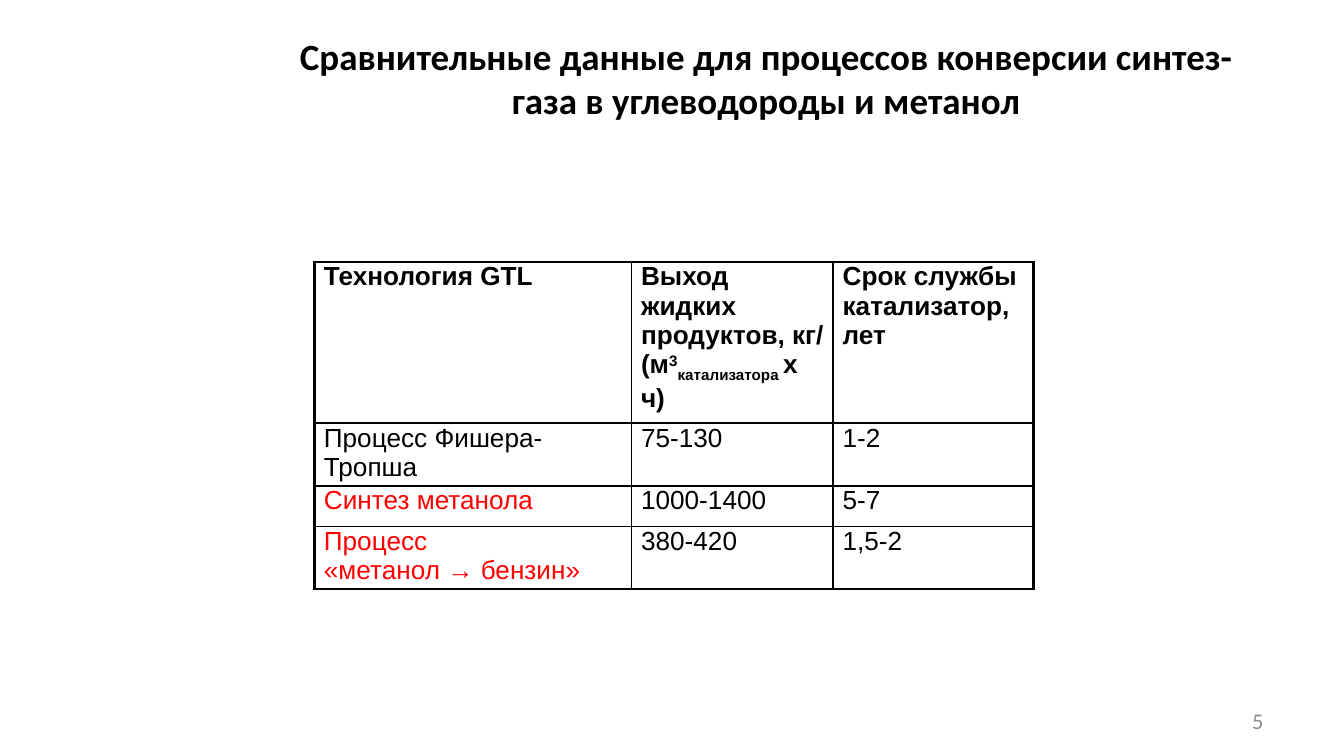
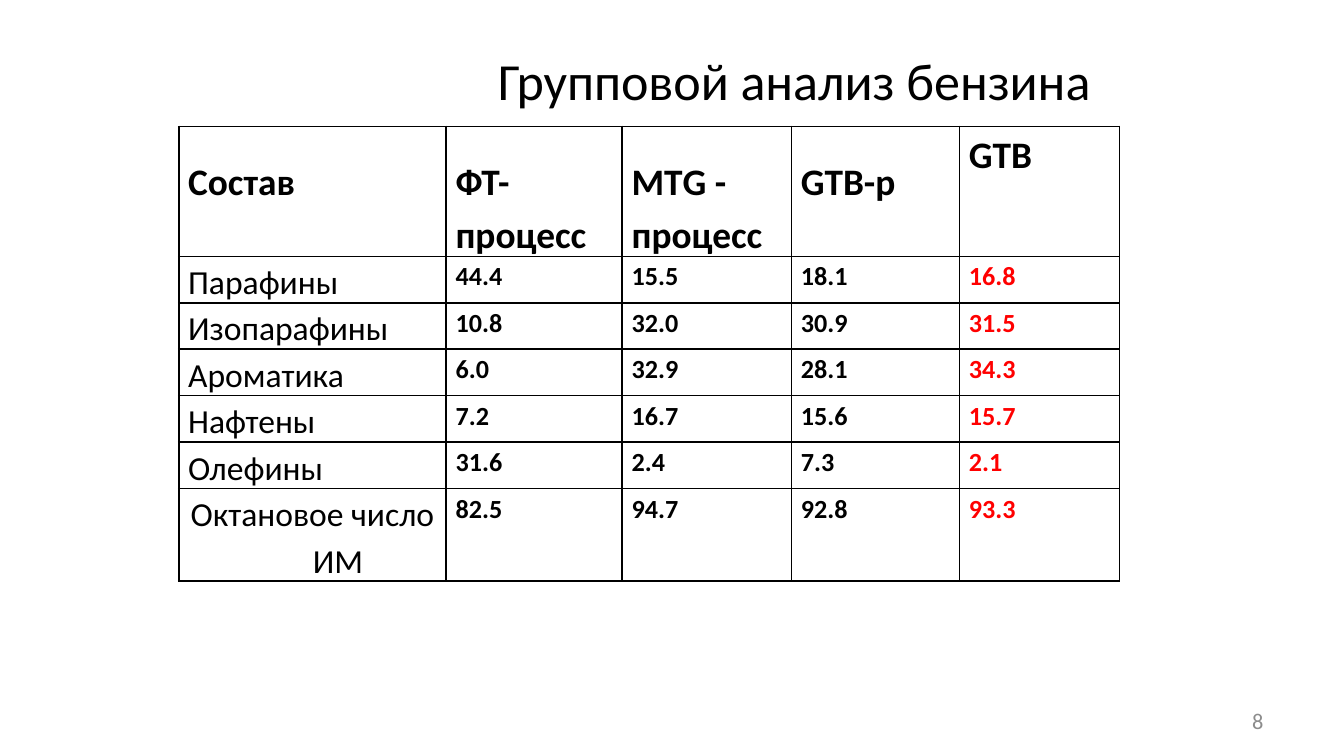
"""Build two slides with tables on synthesis gas conversion and petrol composition."""
import dataclasses
import typing

import pptx
import pptx.dml.color
import pptx.enum.text
import pptx.oxml
import pptx.oxml.ns
import pptx.slide
import pptx.util

Inches = pptx.util.Inches
Align = pptx.enum.text.PP_ALIGN
Anchor = pptx.enum.text.MSO_ANCHOR

BLACK, RED, GRAY = "000000", "FF0000", "8C8C8C"
BODY_FONT, TABLE_FONT = "Calibri", "Arial"
SIDE_MARGIN = 0.07
TIE, NO_BREAK_SPACE = "~", chr(160)


class Run(typing.NamedTuple):
    """A piece of text with its baseline shift in percent."""
    text: str
    baseline: int = 0


@dataclasses.dataclass
class Cell:
    """The runs of a table cell and their format."""
    runs: list[Run]
    size: float
    font: str = BODY_FONT
    color: str = BLACK
    bold: bool = False
    top_margin: float = 0
    line_spacing: float = 1
    align: Align = Align.LEFT
    hanging: float = 0


@dataclasses.dataclass
class Grid:
    """The place, sizes, cells and line widths of a table, whose rows grow to fit."""
    left: float
    top: float
    height: float
    widths: list[float]
    row_heights: list[float]
    rows: list[list[Cell]]
    outer_line: float = 1
    inner_line: float = 1


@dataclasses.dataclass
class Title:
    """The text, place and format of a slide title."""
    text: str
    left: float
    height: float
    size: float
    bold: bool = False
    bottom_margin: float = 0.05


def rgb(color: str) -> pptx.dml.color.RGBColor:
    """Return the colour for a hex string."""
    return pptx.dml.color.RGBColor.from_string(color)


def add_text(paragraph, text: str, *, size: float, font: str = BODY_FONT,
             color: str = BLACK, bold: bool = False, baseline: int = 0) -> None:
    """Add a formatted run to a paragraph, with ties as no-break spaces."""
    run = paragraph.add_run()
    run.text = text.replace(TIE, NO_BREAK_SPACE)
    run.font.size = pptx.util.Pt(size)
    run.font.name = font
    run.font.bold = bold
    run.font.color.rgb = rgb(color)
    if baseline:
        run.font._element.set("baseline", str(baseline * 1000))


def set_borders(table_cell, widths: dict[str, float]) -> None:
    """Draw the four borders of a cell, in schema order."""
    properties = table_cell._tc.get_or_add_tcPr()
    for index, side in enumerate("LRTB"):
        properties.insert(index, pptx.oxml.parse_xml(
            f'<a:ln{side} {pptx.oxml.ns.nsdecls("a")} w="{pptx.util.Pt(widths[side])}">'
            f'<a:solidFill><a:srgbClr val="{BLACK}"/></a:solidFill></a:ln{side}>'))


def fill_cell(table_cell, cell: Cell) -> None:
    """Write the text of a cell with its margins."""
    table_cell.fill.background()
    table_cell.margin_left = table_cell.margin_right = Inches(SIDE_MARGIN)
    table_cell.margin_top = Inches(cell.top_margin)
    table_cell.margin_bottom = 0
    paragraph = table_cell.text_frame.paragraphs[0]
    paragraph.alignment = cell.align
    paragraph.line_spacing = cell.line_spacing
    if cell.hanging:
        properties = paragraph._p.get_or_add_pPr()
        properties.set("marL", str(Inches(cell.hanging)))
        properties.set("indent", str(-Inches(cell.hanging)))
    for run in cell.runs:
        add_text(paragraph, run.text, size=cell.size, font=cell.font,
                 color=cell.color, bold=cell.bold, baseline=run.baseline)


def add_grid(slide: pptx.slide.Slide, grid: Grid) -> None:
    """Add a table with ruled cells."""
    row_count, column_count = len(grid.row_heights), len(grid.widths)
    frame = slide.shapes.add_table(
        row_count, column_count, Inches(grid.left), Inches(grid.top),
        Inches(sum(grid.widths)), Inches(grid.height))
    table = frame.table
    table.first_row = table.horz_banding = False
    for column, width in zip(table.columns, grid.widths):
        column.width = Inches(width)
    for row, height in zip(table.rows, grid.row_heights):
        row.height = Inches(height)
    frame.height = Inches(grid.height)
    for row_index, cells in enumerate(grid.rows):
        for column_index, cell in enumerate(cells):
            table_cell = table.cell(row_index, column_index)
            fill_cell(table_cell, cell)
            on_edge = {"L": column_index == 0, "R": column_index == column_count - 1,
                       "T": row_index == 0, "B": row_index == row_count - 1}
            set_borders(table_cell, {side: grid.outer_line if edge else grid.inner_line
                                     for side, edge in on_edge.items()})


def add_slide(presentation, title: Title, number: int, grid: Grid) -> None:
    """Add a slide with a title, a table and a slide number."""
    slide = presentation.slides.add_slide(presentation.slide_layouts[5])
    shape = slide.shapes.title
    shape.left, shape.top = Inches(title.left), Inches(0.23)
    shape.width, shape.height = Inches(7.18), Inches(title.height)
    frame = shape.text_frame
    frame.auto_size = pptx.enum.text.MSO_AUTO_SIZE.NONE
    frame.vertical_anchor = Anchor.MIDDLE
    frame.margin_bottom = Inches(title.bottom_margin)
    frame.paragraphs[0].alignment = Align.CENTER
    add_text(frame.paragraphs[0], title.text, size=title.size, bold=title.bold)

    number_box = slide.shapes.add_textbox(Inches(7.17), Inches(5.21), Inches(2.33), Inches(0.3))
    number_box.text_frame.word_wrap = True
    number_box.text_frame.vertical_anchor = Anchor.MIDDLE
    paragraph = number_box.text_frame.paragraphs[0]
    paragraph.alignment = Align.RIGHT
    add_text(paragraph, str(number), size=12, color=GRAY)
    add_grid(slide, grid)


def process_grid() -> Grid:
    """Return the table that compares the conversion processes."""
    headers = [
        [Run("Технология~GTL")],
        [Run("Выход жидких продуктов,~кг/(м"), Run("3", 30),
         Run("катализатора~", -25), Run("х ч)")],
        [Run("Срок службы катализатор, лет")],
    ]
    processes = [
        ("Процесс Фишера-Тропша", BLACK, "75-130", "1-2"),
        ("Синтез метанола", RED, "1000-1400", "5-7"),
        ("Процесс «метанол~→~бензин»", RED, "380-420", "1,5-2"),
    ]
    rows = [[Cell(runs, 14, TABLE_FONT, bold=True) for runs in headers]]
    for name, color, *values in processes:
        rows.append([Cell([Run(name)], 14, TABLE_FONT, color)]
                    + [Cell([Run(value)], 14, TABLE_FONT) for value in values])
    return Grid(2.34, 1.95, 2.4, [2.36, 1.5, 1.49], [0.78, 0, 0.3, 0], rows, outer_line=1.5)


def petrol_grid() -> Grid:
    """Return the table with the group analysis of petrol."""
    headers = ["Состав", "ФТ-процесс", "МТG - процесс", "GTB-p", "GTB"]
    fractions = [
        ("Парафины", "44.4", "15.5", "18.1", "16.8"),
        ("Изопарафины", "10.8", "32.0", "30.9", "31.5"),
        ("Ароматика", "6.0", "32.9", "28.1", "34.3"),
        ("Нафтены", "7.2", "16.7", "15.6", "15.7"),
        ("Олефины", "31.6", "2.4", "7.3", "2.1"),
        ("Октановое число ИМ", "82.5", "94.7", "92.8", "93.3"),
    ]
    rows = [[Cell([Run(text)], 20, bold=True, line_spacing=1.15,
                  top_margin=0 if text == headers[-1] else 0.2) for text in headers]]
    for name, *values in fractions:
        colors = [BLACK] * (len(values) - 1) + [RED]
        rows.append([Cell([Run(name)], 18, line_spacing=1.15)]
                    + [Cell([Run(value)], 14, color=color, bold=True, line_spacing=1.15)
                       for value, color in zip(values, colors)])
    octane_cell = rows[-1][0]
    octane_cell.align, octane_cell.hanging = Align.CENTER, 0.38
    return Grid(1.33, 0.94, 3.39, [1.99, 1.31, 1.26, 1.25, 1.19], [0] * len(rows), rows)


def main() -> None:
    """Build and save the presentation."""
    presentation = pptx.Presentation()
    presentation.slide_width = Inches(10)
    presentation.slide_height = Inches(10 * 9 / 16)
    add_slide(presentation, Title(
        "Сравнительные данные для процессов конверсии синтез-газа в углеводороды и метанол",
        2.11, 0.7, 19.8, bold=True), 5, process_grid())
    add_slide(presentation, Title(
        "Групповой анализ бензина", 2.32, 0.94, 27.9, bottom_margin=0.26), 8, petrol_grid())
    presentation.save("out.pptx")


if __name__ == "__main__":
    main()
